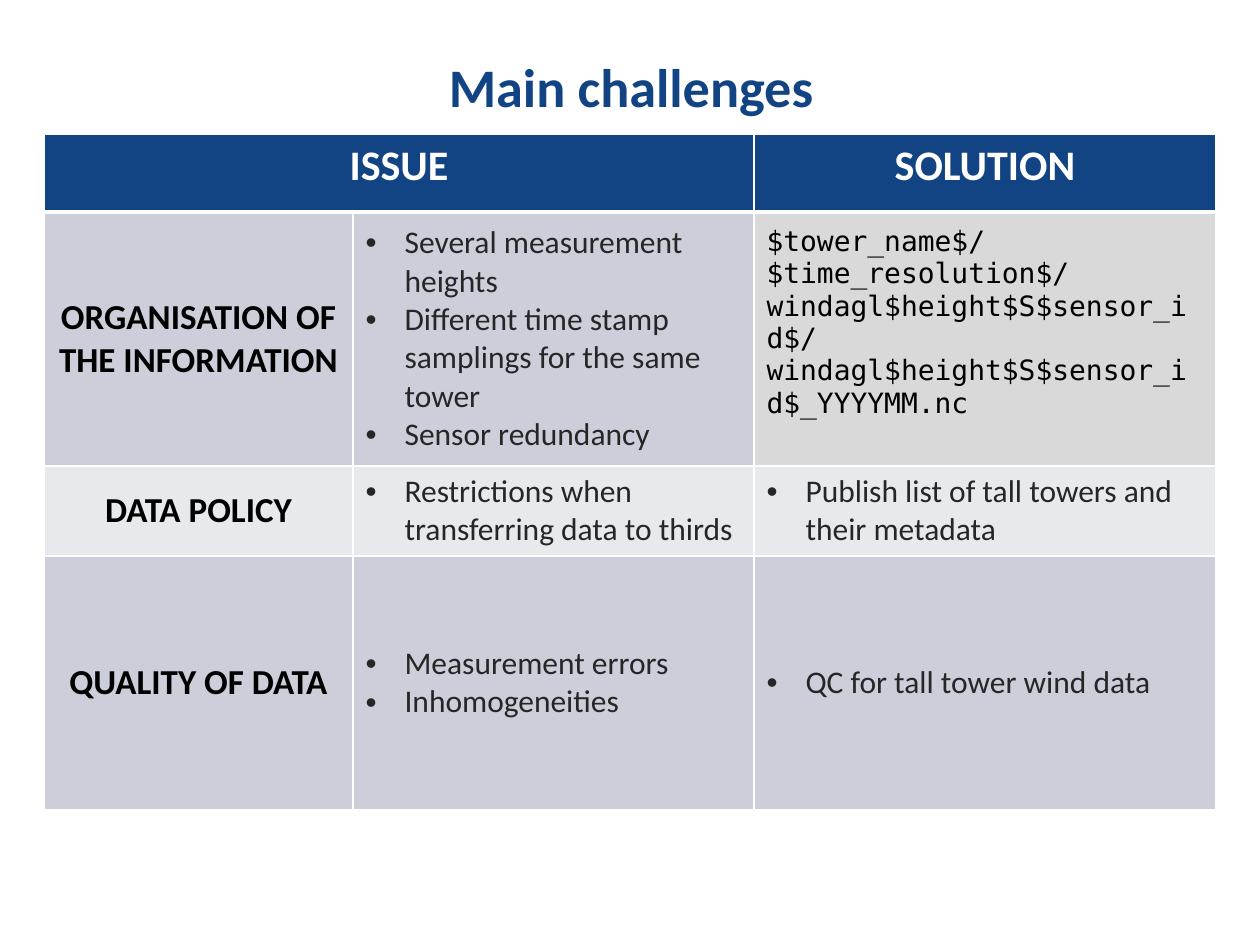
import dataclasses

import lxml.etree
import pptx
import pptx.dml.color
import pptx.enum.text
import pptx.oxml.ns
import pptx.util

ALIGN = pptx.enum.text.PP_ALIGN
ANCHOR = pptx.enum.text.MSO_ANCHOR
PX_PER_INCH = 126


@dataclasses.dataclass(frozen=True)
class Theme:
    font: str = "Calibri"
    code_font: str = "DejaVu Sans Mono"
    navy: str = "124484"
    white: str = "FFFFFF"
    black: str = "000000"
    body: str = "262626"
    band_dark: str = "CCCFD9"
    band_light: str = "E7E9ED"
    code_fill: str = "D9D9D9"
    title_size: int = 31
    title_leading: int = 35
    header_size: int = 24
    topic_size: int = 20
    body_size: int = 18
    code_size: int = 16
    rule: int = 1
    header_rule: int = 3


THEME = Theme()

CHALLENGES = [
    ("ORGANISATION OF THE INFORMATION",
     ["Several measurement heights",
      "Different time stamp samplings for the same tower",
      "Sensor redundancy"],
     ["$tower_name$/",
      "$time_resolution$/",
      "windagl$height$S$sensor_id$/ windagl$height$S$sensor_id$_YYYYMM.nc"]),
    ("DATA POLICY",
     ["Restrictions when transferring data to thirds"],
     ["Publish list of tall towers and their metadata"]),
    ("QUALITY OF DATA",
     ["Measurement errors", "Inhomogeneities"],
     ["QC for tall tower wind data"]),
]
COLUMN_WIDTHS = [309, 401, 462]
ROW_HEIGHTS = [78, 254, 90, 254]
BULLET_INDENT = 39
CODE_BOTTOM_MARGIN = 39


def px(length):
    return pptx.util.Emu(round(length * 914400 / PX_PER_INCH))


def rgb(colour):
    return pptx.dml.color.RGBColor.from_string(colour)


def add_element(parent, tag, **attributes):
    element = lxml.etree.SubElement(parent, pptx.oxml.ns.qn(tag))
    for name, value in attributes.items():
        element.set(name, str(value))
    return element


def write(frame, *lines, size=THEME.body_size, colour=THEME.body, font=THEME.font,
          bold=False, align=ALIGN.LEFT, bullet=False, leading=None):
    """Fill a text frame with one paragraph for each line."""
    frame.word_wrap = True
    for index, line in enumerate(lines):
        paragraph = frame.paragraphs[0] if index == 0 else frame.add_paragraph()
        paragraph.alignment = align
        if leading:
            paragraph.line_spacing = pptx.util.Pt(leading)
        if bullet:
            properties = paragraph._p.get_or_add_pPr()
            properties.set("marL", str(px(BULLET_INDENT)))
            properties.set("indent", str(-px(BULLET_INDENT)))
            add_element(properties, "a:buFont", typeface="Arial")
            add_element(properties, "a:buChar", char="•")
        run = paragraph.add_run()
        run.text = line
        run.font.name = font
        run.font.size = pptx.util.Pt(size)
        run.font.bold = bold
        run.font.color.rgb = rgb(colour)


def style_cell(cell, fill, top=THEME.rule, bottom=THEME.rule):
    """Set the white borders, then the fill, in the order the schema asks for."""
    properties = cell._tc.get_or_add_tcPr()
    borders = {"a:lnL": THEME.rule, "a:lnR": THEME.rule, "a:lnT": top, "a:lnB": bottom}
    for tag, width in borders.items():
        line = add_element(properties, tag, w=pptx.util.Pt(width))
        add_element(add_element(line, "a:solidFill"), "a:srgbClr", val=THEME.white)
    cell.fill.solid()
    cell.fill.fore_color.rgb = rgb(fill)


def place_title(slide, left, top, width, height):
    title = slide.shapes.title
    title.left, title.top, title.width, title.height = map(px, (left, top, width, height))
    title.text_frame.vertical_anchor = ANCHOR.MIDDLE
    write(title.text_frame, "Main challenges", size=THEME.title_size, colour=THEME.navy,
          bold=True, align=ALIGN.CENTER, leading=THEME.title_leading)


def fill_header(table):
    for cell in table.rows[0].cells:
        style_cell(cell, THEME.navy, bottom=THEME.header_rule)
    table.cell(0, 0).merge(table.cell(0, 1))
    for column, heading in ((0, "ISSUE"), (2, "SOLUTION")):
        write(table.cell(0, column).text_frame, heading, size=THEME.header_size,
              colour=THEME.white, bold=True, align=ALIGN.CENTER)


def fill_challenge(table, row, topic, issues, solutions):
    is_code = row == 1
    band = THEME.band_dark if row % 2 else THEME.band_light
    top = THEME.header_rule if row == 1 else THEME.rule
    topic_cell, issue_cell, solution_cell = table.rows[row].cells
    for cell in (topic_cell, issue_cell, solution_cell):
        cell.vertical_anchor = ANCHOR.MIDDLE
        code_cell = is_code and cell is solution_cell
        style_cell(cell, THEME.code_fill if code_cell else band, top=top)
    write(topic_cell.text_frame, topic, size=THEME.topic_size, colour=THEME.black,
          bold=True, align=ALIGN.CENTER)
    write(issue_cell.text_frame, *issues, bullet=True)
    if is_code:
        solution_cell.margin_bottom = px(CODE_BOTTOM_MARGIN)
        write(solution_cell.text_frame, *solutions, size=THEME.code_size,
              colour=THEME.black, font=THEME.code_font)
    else:
        write(solution_cell.text_frame, *solutions, bullet=True)


def place_challenges(slide, left, top):
    table = slide.shapes.add_table(
        len(ROW_HEIGHTS), len(COLUMN_WIDTHS), px(left), px(top),
        px(sum(COLUMN_WIDTHS)), px(sum(ROW_HEIGHTS))).table
    for column, width in zip(table.columns, COLUMN_WIDTHS):
        column.width = px(width)
    for row, height in zip(table.rows, ROW_HEIGHTS):
        row.height = px(height)
    fill_header(table)
    for row, challenge in enumerate(CHALLENGES, start=1):
        fill_challenge(table, row, *challenge)


def main():
    presentation = pptx.Presentation()
    presentation.slide_width = px(1260)
    presentation.slide_height = px(945)
    slide = presentation.slides.add_slide(presentation.slide_layouts.get_by_name("Title Only"))
    place_title(slide, 64, 30, 1134, 116)
    place_challenges(slide, 44, 134)
    presentation.save("out.pptx")


if __name__ == "__main__":
    main()
